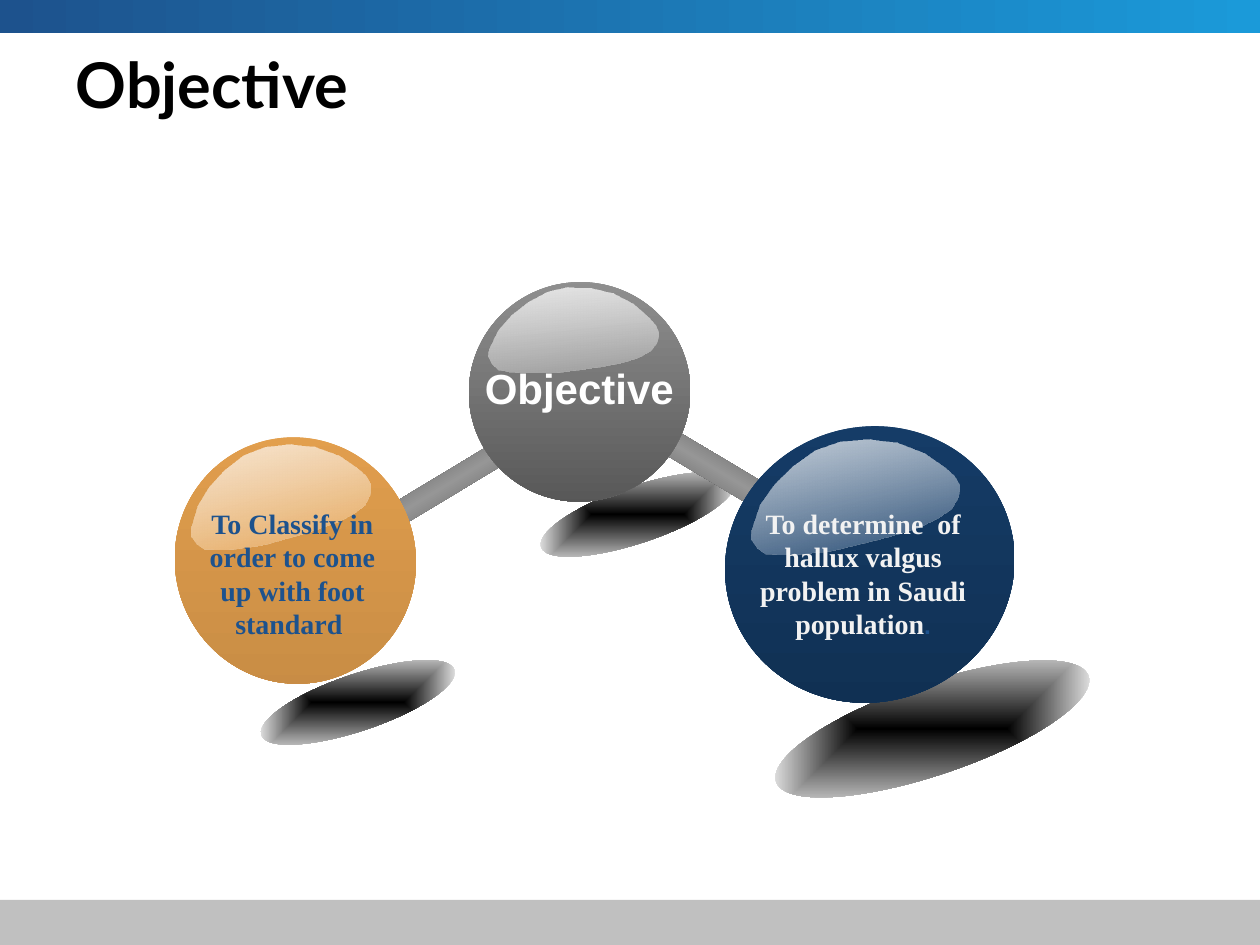
from dataclasses import dataclass

from pptx import Presentation
from pptx import oxml
from pptx import util as u
from pptx.dml import color
from pptx.enum import shapes, text
from pptx.oxml import ns


@dataclass(frozen=True)
class Theme:
    """Colours, fonts and type sizes of the slide."""
    ink: str = "000000"
    white: str = "FFFFFF"
    pale: str = "F2F2F2"
    footer: str = "C0C0C0"
    blue: str = "1D528D"
    sky: str = "1B9AD9"
    rod_edge: str = "454545"
    grey: tuple = ("969696", "515151")
    orange: tuple = ("E4A04E", "C68B44")
    navy: tuple = ("153D69", "102F51")
    title_font: str = "Lato"
    label_font: str = "Arial"
    body_font: str = "Times New Roman"
    title_size: int = 36
    label_size: int = 24
    body_size: int = 16
    dot_size: int = 14


THEME = Theme()
TILT = 341.3
GLOSS_OUTLINE = [
    (0.985, 0.56), (1, 0.67), (0.98, 0.77), (0.94, 0.86), (0.87, 0.92),
    (0.78, 0.96), (0.68, 0.98), (0.6, 0.99), (0.36, 1), (0.27, 0.98),
    (0.18, 0.96), (0.11, 0.93), (0.05, 0.89), (0.02, 0.82), (0, 0.72),
    (0.01, 0.64), (0.075, 0.42), (0.16, 0.26), (0.26, 0.13), (0.38, 0.03),
    (0.5, 0), (0.64, 0.04), (0.76, 0.13), (0.87, 0.28), (0.95, 0.46),
]
SHADOWS = [(10.8, 9.8, 4.11, 1.14), (15.47, 13.77, 6.65, 1.85), (5.16, 13.59, 4.11, 1.14)]
RODS = [((13, 9.14, 2.67, 0.53), 210.8), ((7.34, 9.7, 2.79, 0.48), 328.9)]
SPHERES = [
    {
        "ball": (9.45, 5.69, 4.47, 4.42), "gloss": (9.8, 5.79, 3.45, 1.68),
        "gloss_turn": 353.9, "colors": THEME.grey, "label": (9.52, 7.19, 4.32, 2.31),
        "runs": [("Objective", THEME.label_size, THEME.label_font, THEME.white)],
    },
    {
        "ball": (3.53, 8.81, 4.85, 4.98), "gloss": (3.71, 8.99, 3.73, 1.88),
        "gloss_turn": 345.6, "colors": THEME.orange, "label": (3.76, 10.08, 4.27, 3),
        "runs": [("To Classify in order to come up with foot standard ",
                  THEME.body_size, THEME.body_font, THEME.blue)],
    },
    {
        "ball": (14.6, 8.61, 5.87, 5.54), "gloss": (14.99, 8.89, 4.32, 2.08),
        "gloss_turn": 347.4, "colors": THEME.navy, "label": (14.76, 10.08, 5.28, 3.58),
        "runs": [("To determine  of hallux valgus problem in Saudi population",
                  THEME.body_size, THEME.body_font, THEME.pale),
                 (".", THEME.dot_size, THEME.label_font, THEME.blue)],
    },
]


def lengths(frame):
    """Turn a frame in centimetres into slide lengths."""
    return [u.Cm(value) for value in frame]


def paint(shape, colors, angle=None, turns=False, first_alpha=100):
    """Fill a shape with one colour, a linear gradient, or a central one without an angle."""
    shape.shadow.inherit = False
    shape.line.fill.background()
    shape.fill.solid()
    shape.fill.fore_color.rgb = color.RGBColor.from_string(colors[0])
    if len(colors) == 1:
        return
    stops = ""
    for index, value in enumerate(colors):
        position = index * 100000 // (len(colors) - 1)
        alpha = first_alpha if index == 0 else 100
        stops += (f'<a:gs pos="{position}"><a:srgbClr val="{value}">'
                  f'<a:alpha val="{alpha * 1000}"/></a:srgbClr></a:gs>')
    if angle is None:
        direction = ('<a:path path="shape"><a:fillToRect l="50000" t="50000" '
                     'r="50000" b="50000"/></a:path>')
    else:
        direction = f'<a:lin ang="{angle * 60000}" scaled="0"/>'
    gradient = oxml.parse_xml(
        f'<a:gradFill {ns.nsdecls("a")} rotWithShape="{int(turns)}">'
        f'<a:gsLst>{stops}</a:gsLst>{direction}</a:gradFill>')
    properties = shape.element.spPr
    properties.replace(properties.find(ns.qn("a:solidFill")), gradient)


def add_preset(page, kind, frame, turn=0):
    """Add a preset shape, turned by the given degrees."""
    shape = page.shapes.add_shape(kind, *lengths(frame))
    shape.rotation = turn
    return shape


def add_run(para, content, size, font, ink):
    """Add one bold run to a paragraph."""
    span = para.add_run()
    span.text = content
    span.font.size = u.Pt(size)
    span.font.name = font
    span.font.bold = True
    span.font.color.rgb = color.RGBColor.from_string(ink)


def add_title(page, content):
    """Place and format the title placeholder."""
    title = page.shapes.title
    title.left, title.top, title.width, title.height = lengths((1.27, 0.89, 22.86, 1.57))
    title.text_frame.vertical_anchor = text.MSO_ANCHOR.MIDDLE
    para = title.text_frame.paragraphs[0]
    para.alignment = text.PP_ALIGN.LEFT
    add_run(para, content, THEME.title_size, THEME.title_font, THEME.ink)


def add_gloss(page, frame, turn, base):
    """Add the highlight on a sphere."""
    left, top, width, height = lengths(frame)
    points = [(round(left + x * width), round(top + y * height)) for x, y in GLOSS_OUTLINE]
    builder = page.shapes.build_freeform(*points[0])
    builder.add_line_segments(points[1:], close=True)
    gloss = builder.convert_to_shape()
    gloss.rotation = turn
    paint(gloss, (THEME.white, base), 90, turns=True, first_alpha=85)


def add_label(page, frame, runs):
    """Add a centred, wrapped text box."""
    box = page.shapes.add_textbox(*lengths(frame))
    box.text_frame.word_wrap = True
    para = box.text_frame.paragraphs[0]
    para.alignment = text.PP_ALIGN.CENTER
    for run in runs:
        add_run(para, *run)


def add_sphere(page, sphere):
    """Add a ball with its highlight and label."""
    ball = add_preset(page, shapes.MSO_SHAPE.OVAL, sphere["ball"], TILT)
    paint(ball, sphere["colors"], 90)
    add_gloss(page, sphere["gloss"], sphere["gloss_turn"], sphere["colors"][0])
    add_label(page, sphere["label"], sphere["runs"])


def main():
    """Build the slide and save the deck."""
    deck = Presentation()
    deck.slide_width, deck.slide_height = u.Cm(25.4), u.Cm(19.05)
    page = deck.slides.add_slide(deck.slide_layouts[5])
    rectangle = shapes.MSO_SHAPE.RECTANGLE
    paint(add_preset(page, rectangle, (0, 18.14, 25.4, 0.91)), (THEME.footer,))
    paint(add_preset(page, rectangle, (0, 0, 25.4, 0.66)), (THEME.blue, THEME.sky), 0)
    add_title(page, "Objective")
    for frame in SHADOWS:
        shadow = add_preset(page, shapes.MSO_SHAPE.OVAL, frame, TILT)
        paint(shadow, (THEME.ink, THEME.white))
    for frame, turn in RODS:
        rod = add_preset(page, rectangle, frame, turn)
        paint(rod, (THEME.rod_edge, THEME.grey[0], THEME.rod_edge), 90, turns=True)
    for sphere in SPHERES:
        add_sphere(page, sphere)
    deck.save("out.pptx")


if __name__ == "__main__":
    main()
